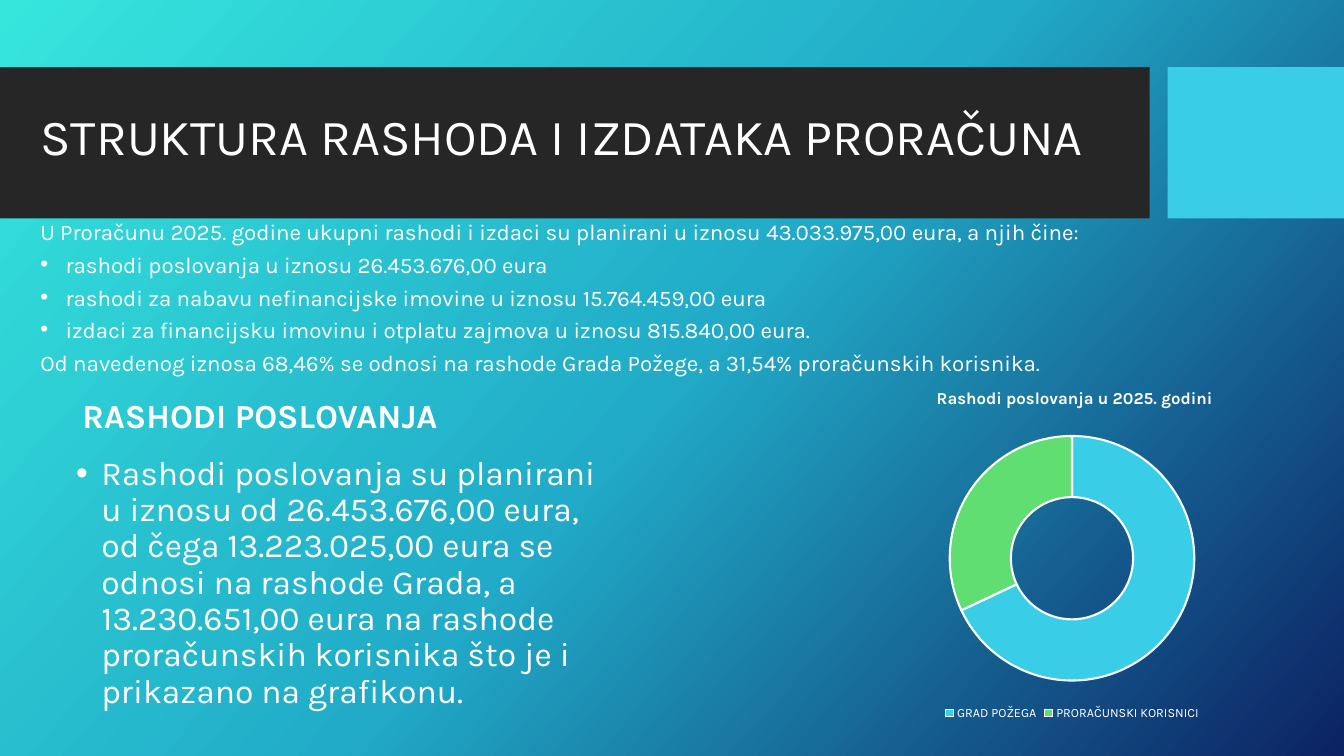
from copy import deepcopy

from lxml import etree
from pptx import Presentation
from pptx import util as u
from pptx.chart.data import CategoryChartData
from pptx.dml.color import RGBColor
from pptx.enum import chart as charts, shapes, text
from pptx.oxml import ns

PX = 9525  # 96 px to the inch
WHITE, CHARCOAL, CYAN, GREEN = "FFFFFF", "262626", "39CDE7", "60DE72"
BACKDROP = [(0, "36E6DD"), (0.5, "21ABC8"), (1, "0C2263")]
HEADING = "STRUKTURA RASHODA I IZDATAKA PRORAČUNA"
INTRO = [
    ("U Proračunu 2025. godine ukupni rashodi i izdaci su planirani u iznosu "
     "43.033.975,00 eura, a njih čine:", False),
    ("rashodi poslovanja u iznosu 26.453.676,00 eura", True),
    ("rashodi za nabavu nefinancijske imovine u iznosu 15.764.459,00 eura", True),
    ("izdaci za financijsku imovinu i otplatu zajmova u iznosu 815.840,00 eura.", True),
    ("Od navedenog iznosa 68,46% se odnosi na rashode Grada Požege, a 31,54% "
     "proračunskih korisnika.", False),
]
DETAIL = ("Rashodi poslovanja su planirani u iznosu od 26.453.676,00 eura, od čega "
          "13.223.025,00 eura se odnosi na rashode Grada, a 13.230.651,00 eura na "
          "rashode proračunskih korisnika što je i prikazano na grafikonu.")
SHARES = [("GRAD POŽEGA", 68, CYAN), ("PRORAČUNSKI KORISNICI", 32, GREEN)]


def px(*lengths):
    return [u.Emu(length * PX) for length in lengths]


def color(value):
    return RGBColor.from_string(value)


def assign(target, **values):
    for name, value in values.items():
        setattr(target, name, value)


def set_font(font, size, bold=False):
    assign(font, name="Karla", size=u.Pt(size), bold=bold)
    font.color.rgb = color(WHITE)


def add_bullet(para):
    props = para._p.get_or_add_pPr()
    props.set("marL", str(24 * PX))
    props.set("indent", str(-24 * PX))
    etree.SubElement(props, ns.qn("a:buFont"), typeface="Arial")
    etree.SubElement(props, ns.qn("a:buChar"), char="•")


def write(frame, lines, size, bold=False, spacing=0.9,
          anchor=text.MSO_ANCHOR.TOP, align=text.PP_ALIGN.LEFT):
    assign(frame, word_wrap=True, auto_size=text.MSO_AUTO_SIZE.NONE,
           vertical_anchor=anchor)
    for index, (words, bulleted) in enumerate(lines):
        para = frame.add_paragraph() if index else frame.paragraphs[0]
        assign(para, alignment=align, line_spacing=spacing,
               space_before=u.Pt(10 if index else 0))
        if bulleted:
            add_bullet(para)
        span = para.add_run()
        span.text = words
        set_font(span.font, size, bold)


def add_text(page, box, lines, size, **options):
    write(page.shapes.add_textbox(*px(*box)).text_frame, lines, size, **options)


def paint_background(page):
    fill = page.background.fill
    fill.gradient()
    fill.gradient_angle = 360 - 42
    stop_list = page._element.find(".//" + ns.qn("a:gsLst"))
    stop_list.insert(1, deepcopy(stop_list[0]))
    for stop, (position, value) in zip(fill.gradient_stops, BACKDROP):
        stop.position = position
        stop.color.rgb = color(value)


def add_banner(page, left, top, width, height):
    # Dark bar and accent block, both behind the title
    bar_width, accent_width = 1095, 168
    bands = [(left, bar_width, CHARCOAL),
             (left + width - accent_width, accent_width, CYAN)]
    title = page.shapes.title
    for x, band_width, value in bands:
        band = page.shapes.add_shape(shapes.MSO_SHAPE.RECTANGLE,
                                     *px(x, top, band_width, height))
        band.shadow.inherit = False
        band.fill.solid()
        band.fill.fore_color.rgb = color(value)
        band.line.fill.background()
        title._element.addprevious(band._element)
    # Title
    x, y, title_width, title_height = px(left + 29, top + 21, 1217, 95)
    assign(title, left=x, top=y, width=title_width, height=title_height)
    write(title.text_frame, [(HEADING, False)], 36, anchor=text.MSO_ANCHOR.MIDDLE)


def add_detail(page, left, top, width, height):
    heading_height, gap = 60, 25
    add_text(page, (left + 6, top, width - 30, heading_height),
             [("RASHODI POSLOVANJA", False)], 24, bold=True,
             anchor=text.MSO_ANCHOR.BOTTOM)
    body_top = heading_height + gap
    add_text(page, (left, top + body_top, width, height - body_top),
             [(DETAIL, True)], 24, anchor=text.MSO_ANCHOR.MIDDLE)


def add_shares(page, left, top, width, height):
    # Caption
    caption_height = 35
    add_text(page, (left + 56, top, 373, caption_height),
             [("Rashodi poslovanja u 2025. godini", False)], 12, bold=True,
             align=text.PP_ALIGN.CENTER)
    # Doughnut
    data = CategoryChartData()
    data.categories = [name for name, _, _ in SHARES]
    data.add_series("Series 1", [value for _, value, _ in SHARES])
    chart = page.shapes.add_chart(
        charts.XL_CHART_TYPE.DOUGHNUT,
        *px(left, top + caption_height, width, height - caption_height), data).chart
    assign(chart, has_title=False, has_legend=True)
    set_font(chart.font, 10)
    assign(chart.legend, position=charts.XL_LEGEND_POSITION.BOTTOM,
           include_in_layout=False)
    set_font(chart.legend.font, 9)
    plot = chart.plots[0]
    plot.vary_by_categories = True
    plot._element.find(ns.qn("c:holeSize")).set("val", "75")
    for index, (_, _, value) in enumerate(SHARES):
        style = plot.series[0].points[index].format
        style.fill.solid()
        style.fill.fore_color.rgb = color(value)
        style.line.color.rgb = color(WHITE)
        style.line.width = u.Pt(1.5)


def main():
    deck = Presentation()
    deck.slide_width, deck.slide_height = px(1280, 720)
    page = deck.slides.add_slide(deck.slide_layouts[5])
    paint_background(page)
    add_banner(page, 0, 64, 1280, 144)
    add_text(page, (29, 210, 1217, 114), INTRO, 16, spacing=0.7)
    add_detail(page, 63, 360, 518, 306)
    add_shares(page, 781, 367, 480, 323)
    deck.save("out.pptx")


if __name__ == "__main__":
    main()
